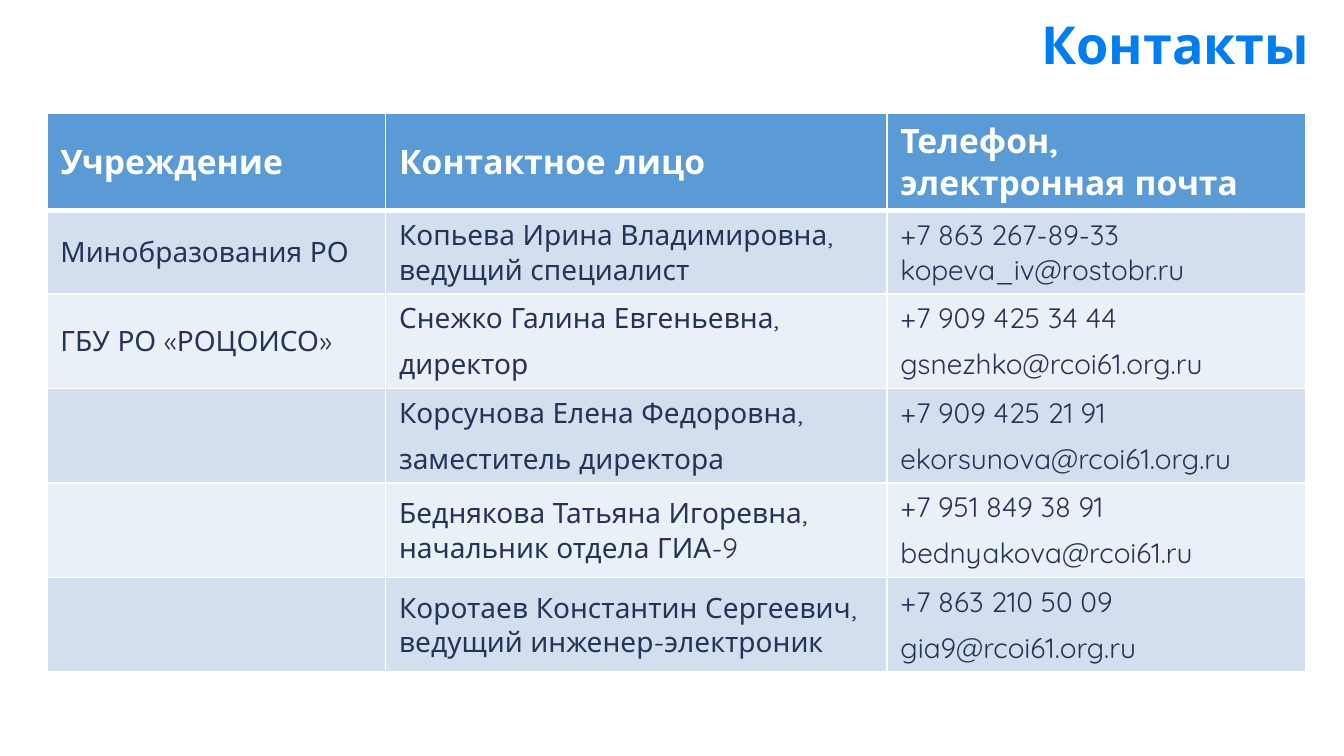
from lxml.etree import SubElement
from pptx import Presentation
from pptx.dml.color import RGBColor
from pptx.enum.text import MSO_ANCHOR, PP_ALIGN
from pptx.oxml.ns import qn
from pptx.util import Inches, Pt

FONT = "Quicksand"
COLORS = {
    "title": "007DEE", "head": "5B9BD5", "odd": "D3DFEE",
    "even": "EAF0F7", "text": "253356", "line": "FFFFFF",
}
TITLE = "Контакты"
HEAD = ["Учреждение", "Контактное лицо", "Телефон, электронная почта"]
# A line break inside a cell starts a new paragraph.
ROWS = [
    ["Минобразования РО", "Копьева Ирина Владимировна, ведущий специалист",
     "+7 863 267-89-33 kopeva_iv@rostobr.ru"],
    ["ГБУ РО «РОЦОИСО»", "Снежко Галина Евгеньевна,\nдиректор",
     "+7 909 425 34 44\ngsnezhko@rcoi61.org.ru"],
    ["", "Корсунова Елена Федоровна,\nзаместитель директора",
     "+7 909 425 21 91\nekorsunova@rcoi61.org.ru"],
    ["", "Беднякова Татьяна Игоревна, начальник отдела ГИА-9",
     "+7 951 849 38 91\nbednyakova@rcoi61.ru"],
    ["", "Коротаев Константин Сергеевич, ведущий инженер-электроник",
     "+7 863 210 50 09\ngia9@rcoi61.org.ru"],
]
WIDE = 10
TALL = WIDE * 9 / 16
WIDTHS = [2.52, 3.73, 3.12]
HEIGHTS = [0.72, 0.62] + [0.7] * 4


def style(font, size, color, bold):
    font.name = FONT
    font.size = Pt(size)
    font.bold = bold
    font.color.rgb = RGBColor.from_string(COLORS[color])


def add_borders(cell, widths):
    """Draw left, right, top and bottom lines, placed ahead of the fill."""
    props = cell._tc.get_or_add_tcPr()
    for i, (side, width) in enumerate(zip("LRTB", widths)):
        line = SubElement(props, qn(f"a:ln{side}"), w=str(Pt(width)))
        fill = SubElement(line, qn("a:solidFill"))
        SubElement(fill, qn("a:srgbClr"), val=COLORS["line"])
        props.insert(i, line)


def fill_cell(cell, text, row):
    head = row == 0
    shade = "head" if head else "odd" if row % 2 else "even"
    look = (18, "line", True) if head else (15, "text", False)
    cell.fill.solid()
    cell.fill.fore_color.rgb = RGBColor.from_string(COLORS[shade])
    cell.vertical_anchor = MSO_ANCHOR.MIDDLE
    add_borders(cell, (1, 1, 3 if row == 1 else 1, 3 if head else 1))
    cell.text_frame.text = text
    for i, para in enumerate(cell.text_frame.paragraphs):
        if i:
            para.space_before = Pt(6)
        for run in para.runs:
            style(run.font, *look)


def add_title(slide):
    title = slide.shapes.title
    title.left, title.top = Inches(1.22), Inches(0)
    title.width, title.height = Inches(8.62), Inches(0.71)
    frame = title.text_frame
    frame.text = TITLE
    frame.vertical_anchor = MSO_ANCHOR.MIDDLE
    para = frame.paragraphs[0]
    para.alignment = PP_ALIGN.RIGHT
    para.line_spacing = 0.9
    style(para.runs[0].font, 28, "title", True)


def add_contacts(slide):
    data = [HEAD] + ROWS
    table = slide.shapes.add_table(
        len(data), len(HEAD), Inches(0.35), Inches(0.84),
        Inches(sum(WIDTHS)), Inches(sum(HEIGHTS))).table
    for col, width in zip(table.columns, WIDTHS):
        col.width = Inches(width)
    for row, height in zip(table.rows, HEIGHTS):
        row.height = Inches(height)
    for r, texts in enumerate(data):
        for c, text in enumerate(texts):
            fill_cell(table.cell(r, c), text, r)


def main():
    deck = Presentation()
    deck.slide_width, deck.slide_height = Inches(WIDE), Inches(TALL)
    slide = deck.slides.add_slide(deck.slide_layouts[5])
    add_title(slide)
    add_contacts(slide)
    deck.save("out.pptx")


if __name__ == "__main__":
    main()
